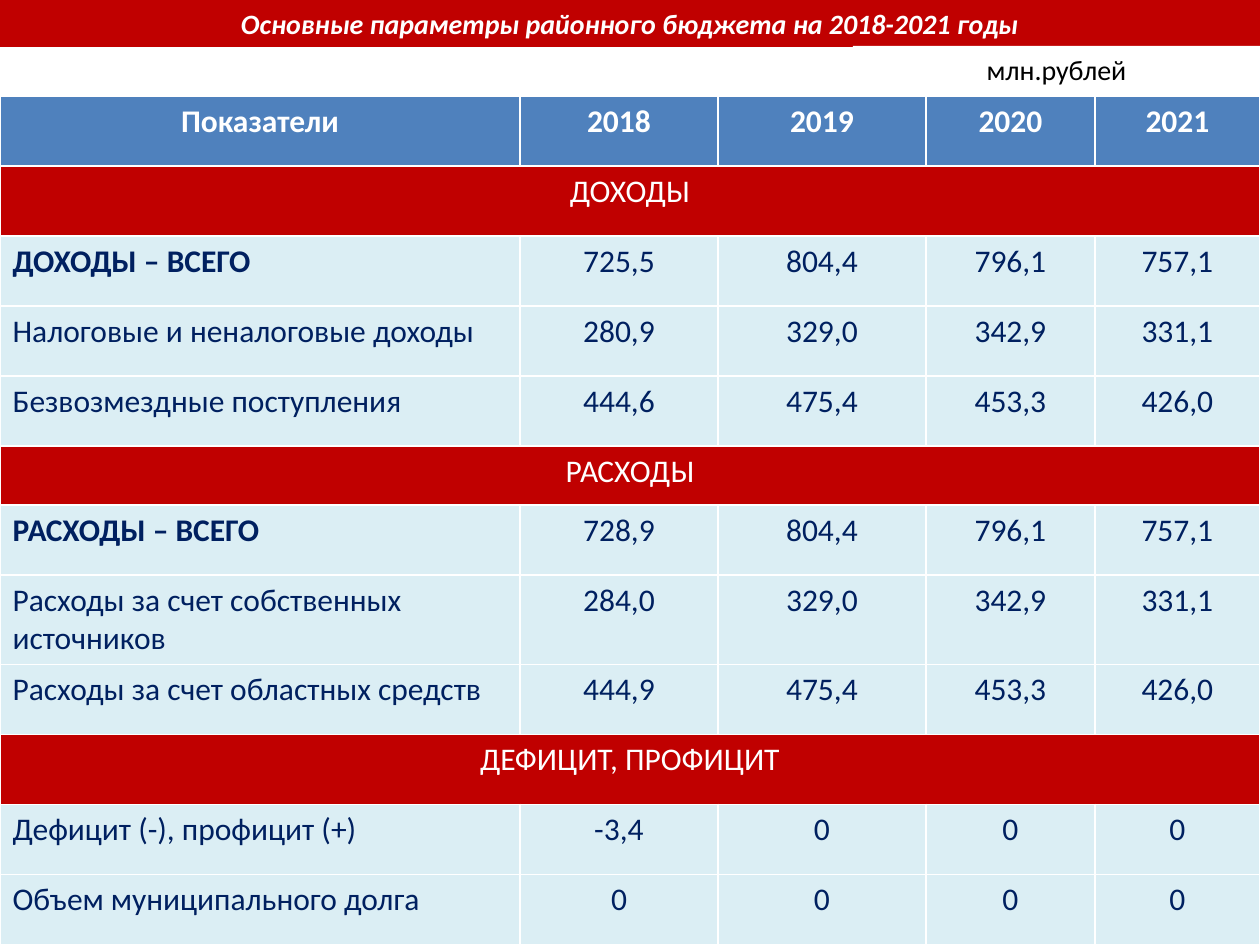
from pptx import Presentation
from pptx.dml.color import RGBColor
from pptx.enum.shapes import MSO_SHAPE
from pptx.enum.text import MSO_ANCHOR, PP_ALIGN
from pptx.util import Pt

RED = RGBColor(0xC0, 0x00, 0x00)
BLUE = RGBColor(0x4F, 0x81, 0xBD)
PALE = RGBColor(0xDB, 0xEE, 0xF4)
NAVY = RGBColor(0x00, 0x20, 0x60)
WHITE = RGBColor(0xFF, 0xFF, 0xFF)
BLACK = RGBColor(0x00, 0x00, 0x00)

WIDTHS = [520, 198, 208, 169, 165]
ROW = 70
HEIGHTS = {5: 59, 7: 89}  # rows that differ from ROW

ROWS = [
    ["Показатели", "2018", "2019", "2020", "2021"],
    ["ДОХОДЫ"],
    ["ДОХОДЫ – ВСЕГО", "725,5", "804,4", "796,1", "757,1"],
    ["Налоговые и неналоговые доходы", "280,9", "329,0", "342,9", "331,1"],
    ["Безвозмездные поступления", "444,6", "475,4", "453,3", "426,0"],
    ["РАСХОДЫ"],
    ["РАСХОДЫ – ВСЕГО", "728,9", "804,4", "796,1", "757,1"],
    ["Расходы за счет собственных источников", "284,0", "329,0", "342,9", "331,1"],
    ["Расходы за счет областных средств", "444,9", "475,4", "453,3", "426,0"],
    ["ДЕФИЦИТ, ПРОФИЦИТ"],
    ["Дефицит (-), профицит (+)", "-3,4", "0", "0", "0"],
    ["Объем муниципального долга", "0", "0", "0", "0"],
]


def px(n):
    return round(n * 914400 / 126)


def write(frame, text, size, color, bold=False, align=PP_ALIGN.CENTER):
    frame.text = text
    para = frame.paragraphs[0]
    para.alignment = align
    font = para.font
    font.name, font.size, font.bold = "Calibri", Pt(size), bold
    font.color.rgb = color


prs = Presentation()
prs.slide_width, prs.slide_height = px(1260), px(945)
slide = prs.slides.add_slide(prs.slide_layouts[5])

title = slide.shapes.title
title.left, title.top, title.width, title.height = 0, 0, px(1260), px(47)
title.fill.solid()
title.fill.fore_color.rgb = RED
write(title.text_frame, "Основные параметры районного бюджета на 2018-2021 годы", 16, WHITE, True)
title.text_frame.paragraphs[0].font.italic = True

unit = slide.shapes.add_shape(MSO_SHAPE.RECTANGLE, px(853), px(46), px(407), px(47))
unit.shadow.inherit = False
unit.fill.solid()
unit.fill.fore_color.rgb = WHITE
unit.line.fill.background()
unit.text_frame.vertical_anchor = MSO_ANCHOR.MIDDLE
write(unit.text_frame, "млн.рублей", 16, BLACK)

tall = [HEIGHTS.get(r, ROW) for r in range(len(ROWS))]
frame = slide.shapes.add_table(len(ROWS), len(WIDTHS), 0, px(96), px(sum(WIDTHS)), px(sum(tall)))
table = frame.table
for col, width in zip(table.columns, WIDTHS):
    col.width = px(width)

for r, texts in enumerate(ROWS):
    table.rows[r].height = px(tall[r])
    band = len(texts) == 1
    head = r == 0
    if band:
        table.cell(r, 0).merge(table.cell(r, len(WIDTHS) - 1))
    for c, text in enumerate(texts):
        cell = table.cell(r, c)
        cell.fill.solid()
        cell.fill.fore_color.rgb = BLUE if head else RED if band else PALE
        label = c == 0 and not (head or band)
        write(
            cell.text_frame, text, 18,
            WHITE if head or band else NAVY,
            head or (label and text.endswith("ВСЕГО")),
            PP_ALIGN.LEFT if label else PP_ALIGN.CENTER,
        )

prs.save("out.pptx")
